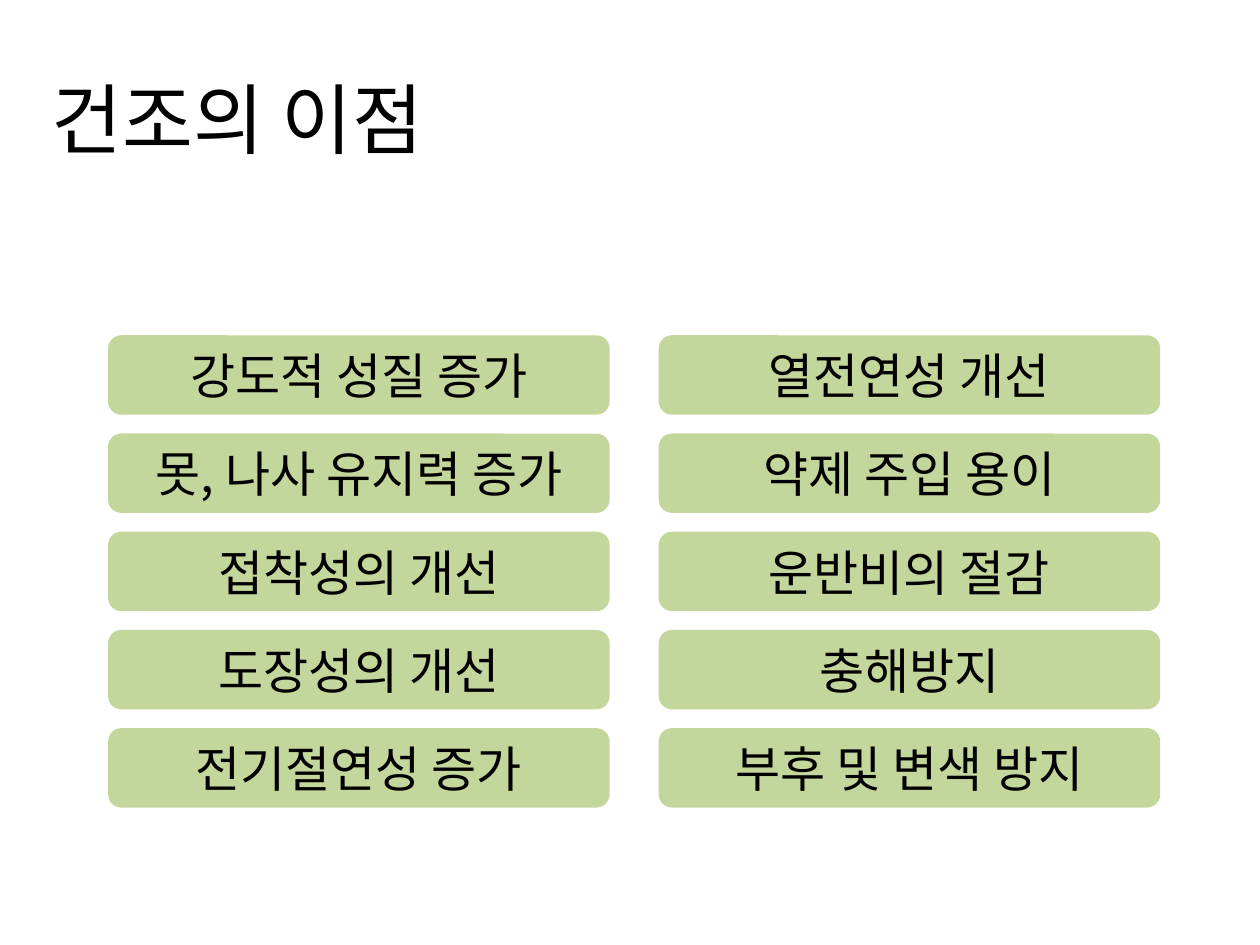
from lxml import etree
from pptx import Presentation
from pptx.dml.color import RGBColor
from pptx.enum.shapes import MSO_SHAPE
from pptx.enum.text import MSO_ANCHOR, PP_ALIGN
from pptx.oxml.ns import qn
from pptx.util import Cm, Pt

ROUNDED = MSO_SHAPE.ROUNDED_RECTANGLE
MIDDLE = MSO_ANCHOR.MIDDLE
CENTER = PP_ALIGN.CENTER

FONT = "Noto Sans CJK KR"
BLACK = RGBColor(0x00, 0x00, 0x00)
GREEN = RGBColor(0xC3, 0xD6, 0x9B)

LEFT, TOP = 2.18, 6.76
BOX_WIDTH, BOX_HEIGHT = 10.11, 1.6
COLUMN_STEP, ROW_STEP = 11.1, 1.98

BENEFIT_COLUMNS = [
    ["강도적 성질 증가", "못, 나사 유지력 증가", "접착성의 개선",
     "도장성의 개선", "전기절연성 증가"],
    ["열전연성 개선", "약제 주입 용이", "운반비의 절감",
     "충해방지", "부후 및 변색 방지"],
]


def write_centered(frame, text, size):
    frame.word_wrap = True
    frame.vertical_anchor = MIDDLE
    paragraph = frame.paragraphs[0]
    paragraph.text = text
    paragraph.alignment = CENTER
    font = paragraph.font
    font.size = Pt(size)
    font.color.rgb = BLACK
    font.name = FONT
    # Hangul takes the East Asian typeface, not the Latin one.
    defaults = paragraph._p.get_or_add_pPr().find(qn("a:defRPr"))
    etree.SubElement(defaults, qn("a:ea"), typeface=FONT)


def add_title(slide, text):
    title = slide.shapes.add_textbox(Cm(-3.76), Cm(0.79), Cm(17.09), Cm(3.18))
    write_centered(title.text_frame, text, 44)


def add_benefit(slide, text, column, row):
    benefit = slide.shapes.add_shape(
        ROUNDED,
        Cm(LEFT + column * COLUMN_STEP), Cm(TOP + row * ROW_STEP),
        Cm(BOX_WIDTH), Cm(BOX_HEIGHT))
    benefit.shadow.inherit = False
    benefit.fill.solid()
    benefit.fill.fore_color.rgb = GREEN
    benefit.line.fill.background()
    write_centered(benefit.text_frame, text, 28)


def main():
    deck = Presentation()
    deck.slide_width, deck.slide_height = Cm(25.4), Cm(19.05)
    slide = deck.slides.add_slide(deck.slide_layouts[6])
    add_title(slide, "건조의 이점")
    for column, benefits in enumerate(BENEFIT_COLUMNS):
        for row, text in enumerate(benefits):
            add_benefit(slide, text, column, row)
    deck.save("out.pptx")


if __name__ == "__main__":
    main()
